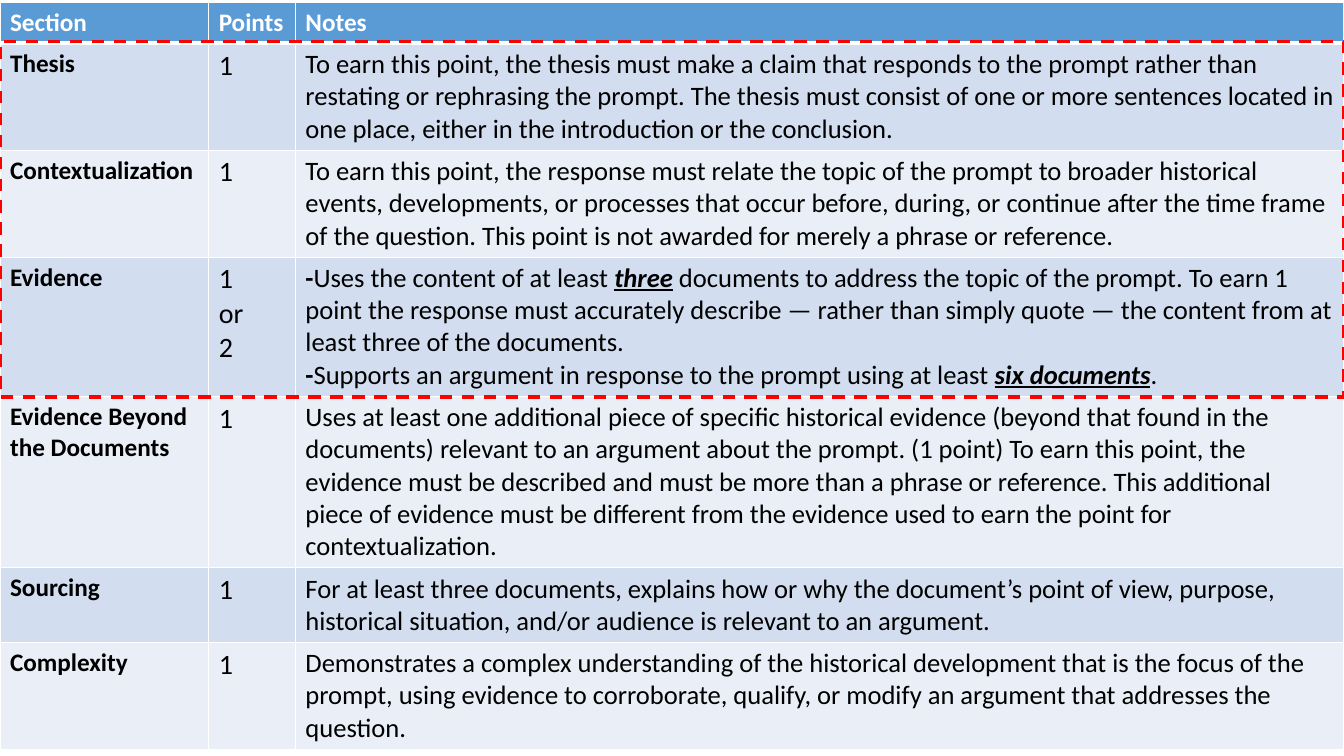
from lxml.etree import SubElement
from pptx import Presentation
from pptx.dml.color import RGBColor
from pptx.enum.dml import MSO_LINE
from pptx.enum.shapes import MSO_SHAPE
from pptx.oxml.ns import qn
from pptx.util import Inches, Pt

HEADINGS = ["Section", "Points", "Notes"]
EMPHASIS = {"bold": True, "italic": True, "underline": True}
BOLD = {"bold": True}

RUBRIC = [
    ("Thesis", ["1"], 3, [[
        ("To earn this point, the thesis must make a claim that responds to the prompt rather than "
         "restating or rephrasing the prompt. The thesis must consist of one or more sentences "
         "located in one place, either in the introduction or the conclusion.", {})]]),
    ("Contextualization", ["1"], 3, [[
        ("To earn this point, the response must relate the topic of the prompt to broader historical "
         "events, developments, or processes that occur before, during, or continue after the time "
         "frame of the question. This point is not awarded for merely a phrase or reference.", {})]]),
    ("Evidence", ["1", "or", "2"], 4, [
        [("-", BOLD), ("Uses the content of at least ", {}), ("three", EMPHASIS),
         (" documents to address the topic of the prompt. To earn 1 point the response must "
          "accurately describe — rather than simply quote — the content from at least three of "
          "the documents.", {})],
        [("-", BOLD), ("Supports an argument in response to the prompt using at least ", {}),
         ("six documents", EMPHASIS), (".", {})]]),
    ("Evidence Beyond the Documents", ["1"], 5, [[
        ("Uses at least one additional piece of specific historical evidence (beyond that found in "
         "the documents) relevant to an argument about the prompt. (1 point) To earn this point, the "
         "evidence must be described and must be more than a phrase or reference. This additional "
         "piece of evidence must be different from the evidence used to earn the point for "
         "contextualization.", {})]]),
    ("Sourcing", ["1"], 2, [[
        ("For at least three documents, explains how or why the document’s point of view, purpose, "
         "historical situation, and/or audience is relevant to an argument.", {})]]),
    ("Complexity", ["1"], 3, [[
        ("Demonstrates a complex understanding of the historical development that is the focus of "
         "the prompt, using evidence to corroborate, qualify, or modify an argument that addresses "
         "the question.", {})]]),
]

THEME = {
    "font": "Calibri",
    "header": "5B9BD5",
    "bands": ["D2DEEF", "EAEFF7"],
    "white": "FFFFFF",
    "text": "000000",
    "highlight": "FF0000",
    "label_size": 18,
    "points_size": 20,
    "notes_size": 19,
}

SLIDE_WIDTH, SLIDE_HEIGHT = 13.33, 7.5
TABLE_TOP = 0.02
COLUMN_WIDTHS = [2.07, 0.86, 10.4]
HEADER_HEIGHT = 0.41
LINE_HEIGHT, CELL_PADDING = 0.32, 0.1
HIGHLIGHT_TOP, HIGHLIGHT_HEIGHT = 0.41, 3.53


def add_text(paragraph, text, size, color=THEME["text"], bold=False, italic=False, underline=False):
    run = paragraph.add_run()
    run.text = text
    font = run.font
    font.name = THEME["font"]
    font.size = Pt(size)
    font.color.rgb = RGBColor.from_string(color)
    font.bold, font.italic, font.underline = bold, italic, underline


def set_borders(cell, bottom_width):
    properties = cell._tc.get_or_add_tcPr()
    for side, width in (("L", 1), ("R", 1), ("T", 1), ("B", bottom_width)):
        line = SubElement(properties, qn(f"a:ln{side}"), w=str(Pt(width)))
        fill = SubElement(line, qn("a:solidFill"))
        SubElement(fill, qn("a:srgbClr"), val=THEME["white"])


def fill_cell(cell, paragraphs, fill, size, bottom_width=1, **text_format):
    set_borders(cell, bottom_width)
    cell.fill.solid()
    cell.fill.fore_color.rgb = RGBColor.from_string(fill)
    for index, runs in enumerate(paragraphs):
        frame = cell.text_frame
        paragraph = frame.add_paragraph() if index else frame.paragraphs[0]
        for text, run_format in runs:
            add_text(paragraph, text, size, **{**text_format, **run_format})


def add_rubric(slide):
    heights = [HEADER_HEIGHT] + [CELL_PADDING + lines * LINE_HEIGHT for _, _, lines, _ in RUBRIC]
    table = slide.shapes.add_table(
        len(heights), len(COLUMN_WIDTHS), 0, Inches(TABLE_TOP),
        Inches(SLIDE_WIDTH), Inches(sum(heights))).table
    for column, width in zip(table.columns, COLUMN_WIDTHS):
        column.width = Inches(width)
    for row, height in zip(table.rows, heights):
        row.height = Inches(height)

    for column, heading in enumerate(HEADINGS):
        fill_cell(table.cell(0, column), [[(heading, BOLD)]], THEME["header"],
                  THEME["label_size"], bottom_width=3, color=THEME["white"])
    for row, (section, points, _, notes) in enumerate(RUBRIC, start=1):
        band = THEME["bands"][(row - 1) % 2]
        fill_cell(table.cell(row, 0), [[(section, BOLD)]], band, THEME["label_size"])
        fill_cell(table.cell(row, 1), [[(point, {})] for point in points], band, THEME["points_size"])
        fill_cell(table.cell(row, 2), notes, band, THEME["notes_size"])


def add_highlight(slide):
    shape = slide.shapes.add_shape(
        MSO_SHAPE.RECTANGLE, 0, Inches(HIGHLIGHT_TOP), Inches(SLIDE_WIDTH), Inches(HIGHLIGHT_HEIGHT))
    shape.shadow.inherit = False
    shape.fill.background()
    shape.line.color.rgb = RGBColor.from_string(THEME["highlight"])
    shape.line.width = Pt(2.25)
    shape.line.dash_style = MSO_LINE.DASH


def main():
    presentation = Presentation()
    presentation.slide_width = Inches(SLIDE_WIDTH)
    presentation.slide_height = Inches(SLIDE_HEIGHT)
    slide = presentation.slides.add_slide(presentation.slide_layouts[6])
    add_rubric(slide)
    add_highlight(slide)
    presentation.save("out.pptx")


if __name__ == "__main__":
    main()
